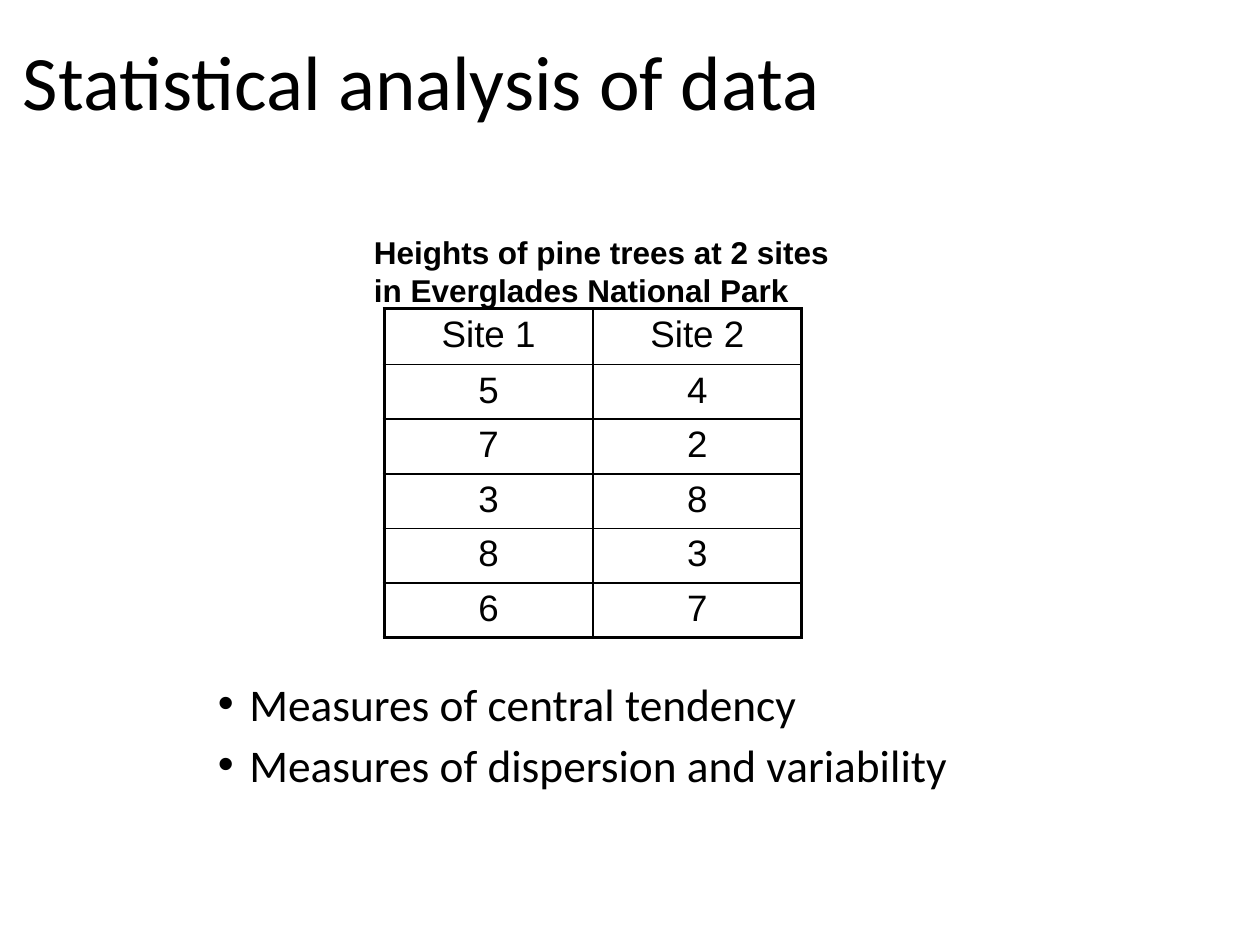
from pptx import Presentation
from pptx.dml.color import RGBColor
from pptx.enum.text import MSO_ANCHOR, PP_ALIGN
from pptx.oxml.ns import qn
from pptx.util import Pt
from lxml.etree import SubElement

INK = "000000"
THIN, THICK = 1, 2.25
ROWS = [("Site 1", "Site 2"), (5, 4), (7, 2), (3, 8), (8, 3), (6, 7)]
AIMS = ["Measures of central tendency", "Measures of dispersion and variability"]


def color(code):
    """Turn a hex string into a colour."""
    return RGBColor.from_string(code)


def style(para, font, size, bold=False):
    """Format every run of a paragraph."""
    for run in para.runs:
        run.font.name = font
        run.font.size = Pt(size)
        run.font.bold = bold
        run.font.color.rgb = color(INK)


def add_text(slide, box, lines, font, size, bold=False):
    """Add a wrapped text box with one paragraph per line."""
    frame = slide.shapes.add_textbox(*map(Pt, box)).text_frame
    frame.word_wrap = True
    frame.text = "\n".join(lines)
    for para in frame.paragraphs:
        style(para, font, size, bold)
    return frame


def add_bullet(para):
    """Give a paragraph a hanging bullet."""
    props = para._p.get_or_add_pPr()
    props.set("marL", str(Pt(18)))
    props.set("indent", str(-Pt(18)))
    SubElement(props, qn("a:buFont")).set("typeface", "Arial")
    SubElement(props, qn("a:buChar")).set("char", "•")


def add_edge(cell, side, width):
    """Draw one border of a cell."""
    line = SubElement(cell._tc.get_or_add_tcPr(), qn("a:" + side), w=str(Pt(width)))
    fill = SubElement(line, qn("a:solidFill"))
    SubElement(fill, qn("a:srgbClr")).set("val", INK)


def fill_cell(cell, value, outer):
    """Write a centred value and border the cell, thick on outer sides."""
    cell.margin_left = cell.margin_right = Pt(5)
    cell.margin_top = cell.margin_bottom = Pt(3)
    cell.text = str(value)
    para = cell.text_frame.paragraphs[0]
    para.alignment = PP_ALIGN.CENTER
    style(para, "Arial", 21)
    for side, rim in outer.items():
        add_edge(cell, side, THICK if rim else THIN)
    cell.fill.background()


def add_grid(slide, box, rows):
    """Add the table of tree heights."""
    high, wide = len(rows), len(rows[0])
    table = slide.shapes.add_table(high, wide, *map(Pt, box)).table
    table.horz_banding = table.first_row = False
    for r, row in enumerate(rows):
        table.rows[r].height = Pt(30.6 if r else 32)
        for c, value in enumerate(row):
            outer = {"lnL": c == 0, "lnR": c == wide - 1,
                     "lnT": r == 0, "lnB": r == high - 1}
            fill_cell(table.cell(r, c), value, outer)


def main():
    """Build and save the slide."""
    deck = Presentation()
    deck.slide_width, deck.slide_height = Pt(720), Pt(540)
    slide = deck.slides.add_slide(deck.slide_layouts[6])

    title = add_text(slide, (6, 3.6, 705.6, 90),
                     ["Statistical analysis of data"], "Calibri", 44)
    title.vertical_anchor = MSO_ANCHOR.MIDDLE
    title.paragraphs[0].line_spacing = 0.9

    aims = add_text(slide, (117.4, 388.8, 476.6, 67.7), AIMS, "Calibri", 25.9)
    for para in aims.paragraphs:
        para.line_spacing = 0.8
        para.space_before = Pt(10)
        add_bullet(para)

    add_grid(slide, (219.6, 176.4, 238.6, 185), ROWS)
    add_text(slide, (206.6, 129.6, 285, 51),
             ["Heights of pine trees at 2 sites in Everglades National Park"],
             "Arial", 18, True)
    deck.save("out.pptx")


if __name__ == "__main__":
    main()
